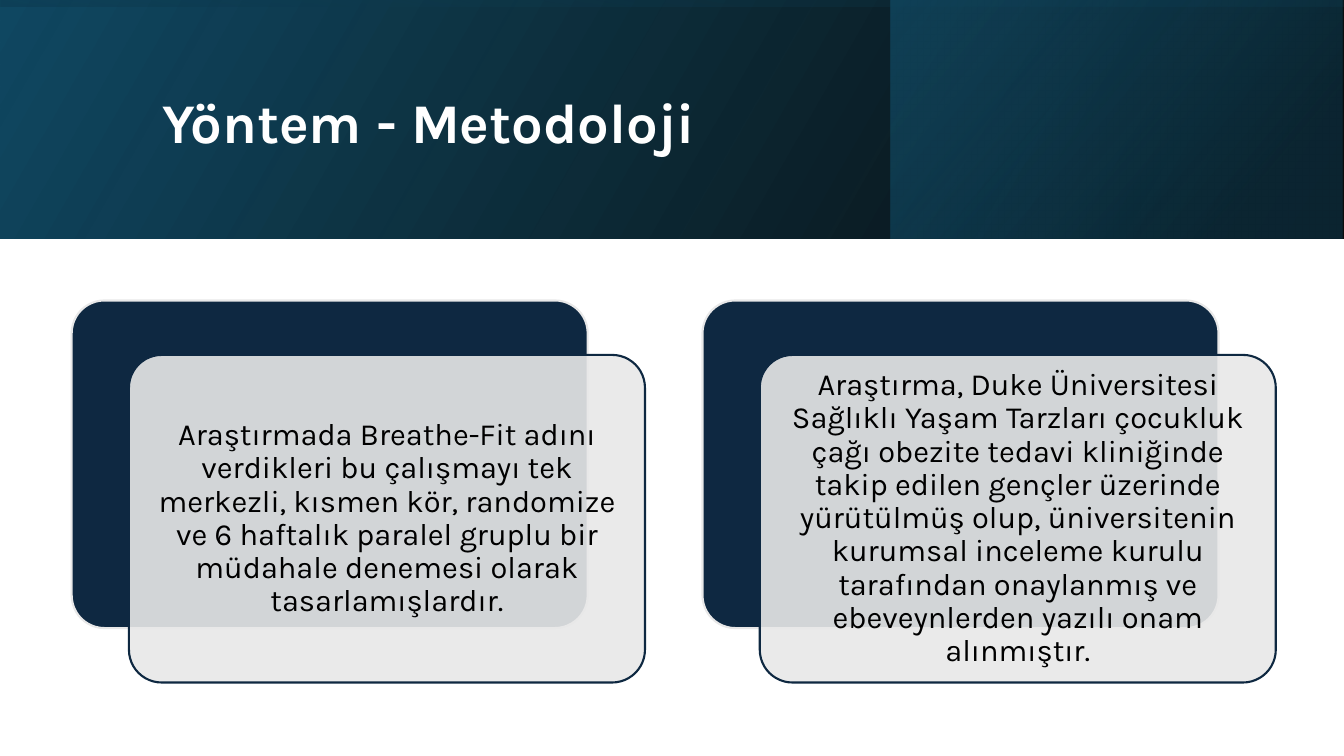
from lxml import etree
from pptx import Presentation
from pptx.dml.color import RGBColor
from pptx.enum.shapes import MSO_SHAPE as Shape
from pptx.enum.text import MSO_ANCHOR as Anchor, MSO_AUTO_SIZE as AutoSize, PP_ALIGN as Align
from pptx.oxml.ns import qn
from pptx.util import Pt

WHITE = RGBColor(0xFF, 0xFF, 0xFF)
BLACK = RGBColor(0x00, 0x00, 0x00)
NAVY = RGBColor(0x0E, 0x28, 0x41)
GRAY = RGBColor(0xE8, 0xE8, 0xE8)
TEAL = RGBColor(0x15, 0x60, 0x82)
MID_TEAL = RGBColor(0x10, 0x48, 0x62)
DARK_TEAL = RGBColor(0x0B, 0x30, 0x41)

SLIDE_WIDTH, SLIDE_HEIGHT = 960, 540
BANNER_HEIGHT = 170.6
CARD_LEFT, CARD_TOP, CARD_PITCH = 51.2, 214.6, 450.6
CARD_WIDTH, CARD_HEIGHT = 368.6, 234
PANEL_SHIFT_X, PANEL_SHIFT_Y = 40.9, 38.9

CARD_TEXTS = [
    "Araştırmada Breathe-Fit adını verdikleri bu çalışmayı tek merkezli, kısmen kör, "
    "randomize ve 6 haftalık paralel gruplu bir müdahale denemesi olarak tasarlamışlardır.",
    "Araştırma, Duke Üniversitesi Sağlıklı Yaşam Tarzları çocukluk çağı obezite tedavi "
    "kliniğinde takip edilen gençler üzerinde yürütülmüş olup, üniversitenin kurumsal "
    "inceleme kurulu tarafından onaylanmış ve ebeveynlerden yazılı onam alınmıştır.",
]


def set_alpha(color_element, percent):
    etree.SubElement(color_element, qn("a:alpha"), val=str(percent * 1000))


class SlideBuilder:
    font_name = "Karla"
    title_size = 40
    text_size = 22
    line_spacing = 0.9
    line_width = 1.5
    text_inset = 6.6

    def __init__(self, slide):
        self.slide = slide

    def add_shape(self, kind, left, top, width, height):
        shape = self.slide.shapes.add_shape(kind, Pt(left), Pt(top), Pt(width), Pt(height))
        shape.shadow.inherit = False
        return shape

    def add_banner(self, left, top, width, height, stops, angle, rotation=0):
        """Add a mirrored rectangle; stops are (position, colour, opacity) in percent."""
        banner = self.add_shape(Shape.RECTANGLE, left, top, width, height)
        banner.rotation = rotation
        banner.line.fill.background()
        banner.fill.gradient()
        properties = banner._element.spPr
        properties.get_or_add_xfrm().flipH = True
        gradient = properties.find(qn("a:gradFill"))
        stop_list = gradient.find(qn("a:gsLst"))
        for old_stop in list(stop_list):
            stop_list.remove(old_stop)
        for position, color, opacity in stops:
            stop = etree.SubElement(stop_list, qn("a:gs"), pos=str(position * 1000))
            set_alpha(etree.SubElement(stop, qn("a:srgbClr"), val=str(color)), opacity)
        gradient.find(qn("a:lin")).set("ang", str(angle * 60000))

    def add_title(self, text, left, top, width, height):
        title = self.slide.shapes.title
        title.left, title.top, title.width, title.height = map(Pt, (left, top, width, height))
        self.slide.shapes._spTree.append(title._element)  # in front of the banners
        self.add_text(title.text_frame, text, Align.LEFT, self.title_size, WHITE, bold=True)

    def add_rounded_box(self, left, top, fill_color, line_color):
        box = self.add_shape(Shape.ROUNDED_RECTANGLE, left, top, CARD_WIDTH, CARD_HEIGHT)
        box.adjustments[0] = 0.1
        box.fill.solid()
        box.fill.fore_color.rgb = fill_color
        box.line.color.rgb = line_color
        box.line.width = Pt(self.line_width)
        return box

    def add_card(self, text, left, top):
        """Add a navy box with a translucent text panel shifted over it."""
        self.add_rounded_box(left, top, NAVY, GRAY)
        panel = self.add_rounded_box(left + PANEL_SHIFT_X, top + PANEL_SHIFT_Y, GRAY, NAVY)
        set_alpha(panel._element.spPr.find(qn("a:solidFill"))[0], 90)
        frame = panel.text_frame
        frame.margin_left = frame.margin_right = Pt(self.text_inset)
        frame.margin_top = frame.margin_bottom = Pt(self.text_inset)
        self.add_text(frame, text, Align.CENTER, self.text_size, BLACK)

    def add_text(self, frame, text, alignment, size, color, bold=False):
        frame.word_wrap = True
        frame.auto_size = AutoSize.NONE
        frame.vertical_anchor = Anchor.MIDDLE
        paragraph = frame.paragraphs[0]
        paragraph.alignment = alignment
        paragraph.line_spacing = self.line_spacing
        run = paragraph.add_run()
        run.text = text
        run.font.name = self.font_name
        run.font.size = Pt(size)
        run.font.bold = bold
        run.font.color.rgb = color


def main():
    presentation = Presentation()
    presentation.slide_width = Pt(SLIDE_WIDTH)
    presentation.slide_height = Pt(SLIDE_HEIGHT)
    title_only = presentation.slide_layouts[5]
    builder = SlideBuilder(presentation.slides.add_slide(title_only))

    builder.add_banner(0, 0, SLIDE_WIDTH, BANNER_HEIGHT,
                       [(0, BLACK, 96), (100, MID_TEAL, 100)], 330)
    builder.add_banner(636.4, 0, 322.8, BANNER_HEIGHT,
                       [(19, DARK_TEAL, 68), (100, TEAL, 48)], 320)
    overlay_left = (SLIDE_WIDTH - BANNER_HEIGHT) / 2
    builder.add_banner(overlay_left, -overlay_left, BANNER_HEIGHT, SLIDE_WIDTH,
                       [(23, MID_TEAL, 16), (99, BLACK, 45)], 350, rotation=270)

    builder.add_title("Yöntem - Metodoloji", 108.7, 27.4, 765.4, 123.8)
    for index, text in enumerate(CARD_TEXTS):
        builder.add_card(text, CARD_LEFT + index * CARD_PITCH, CARD_TOP)

    presentation.save("out.pptx")


if __name__ == "__main__":
    main()
